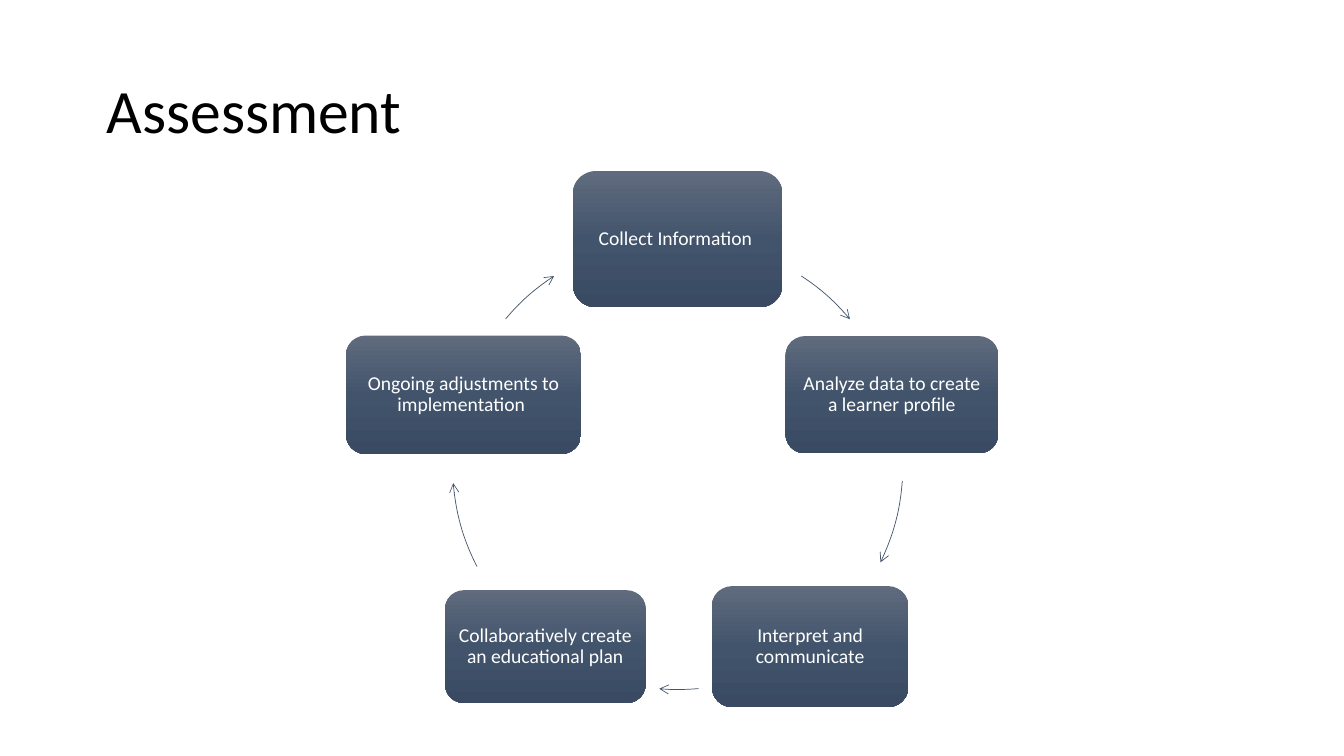
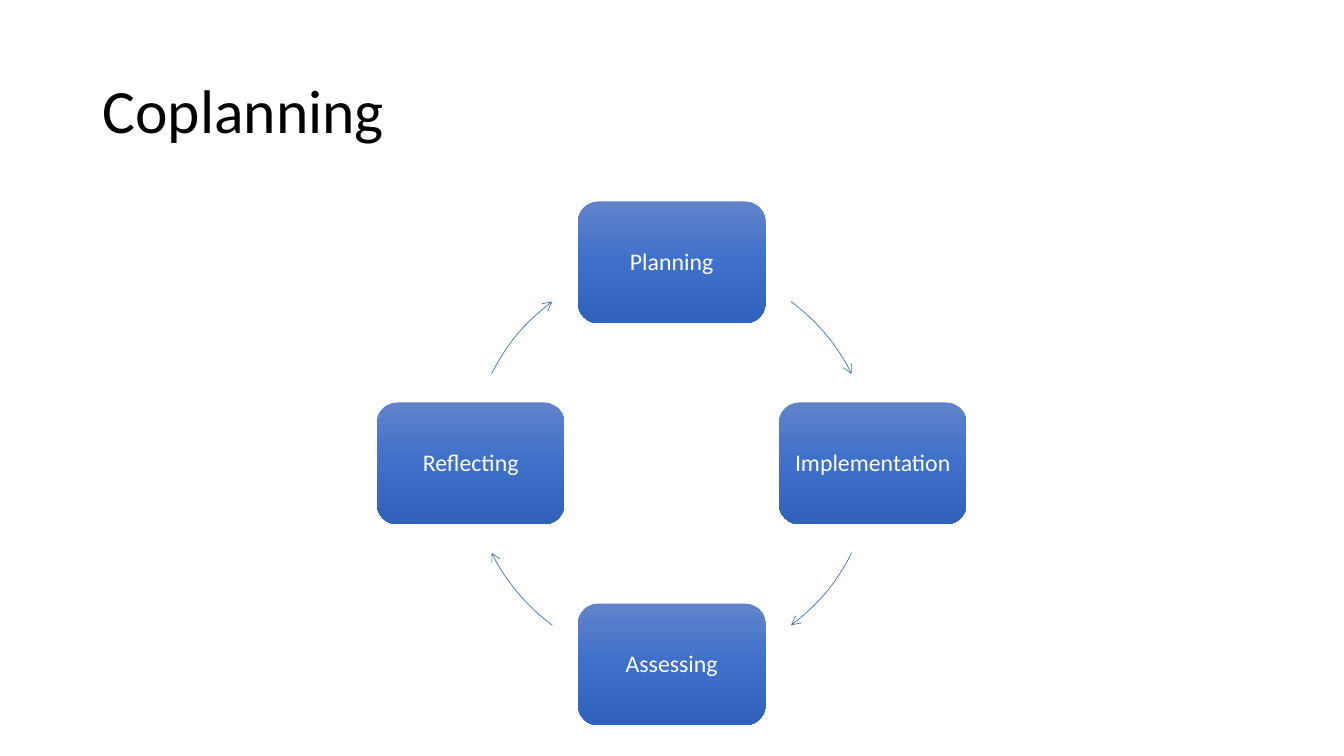
import math
from collections import namedtuple
from copy import deepcopy
from dataclasses import dataclass

from lxml import etree
from pptx import Presentation
from pptx.dml.color import RGBColor
from pptx.enum import shapes, text
from pptx.oxml import ns
from pptx.util import Pt

Box = namedtuple("Box", "left top width height")
Node = namedtuple("Node", "label width height")
Palette = namedtuple("Palette", "gradient line")


@dataclass(frozen=True)
class Theme:
    font: str = "Calibri"
    title_size: float = 44
    title_color: str = "000000"
    node_color: str = "FFFFFF"
    five_node_size: float = 14
    four_node_size: float = 17
    line_width: float = 0.5
    line_spacing: float = 0.9
    slate: Palette = Palette(("606B7D", "42546C", "394A62"), "44546A")
    blue: Palette = Palette(("6183CB", "3E70CA", "3062BB"), "4472C4")


THEME = Theme()
SLIDE_WIDTH, SLIDE_HEIGHT = 960, 540
TITLE_ONLY = 5


def place(sp, box):
    sp.left, sp.top, sp.width, sp.height = (Pt(v) for v in box)


def write(tf, words, size, color, align):
    tf.text = words
    tf.word_wrap = True
    tf.vertical_anchor = text.MSO_ANCHOR.MIDDLE
    p = tf.paragraphs[0]
    p.alignment = align
    p.line_spacing = THEME.line_spacing
    font = p.runs[0].font
    font.name = THEME.font
    font.size = Pt(size)
    font.color.rgb = RGBColor.from_string(color)


def fill_gradient(sp, colors):
    sp.fill.gradient()
    sp.fill.gradient_angle = 270
    stops = sp._element.spPr.find(".//" + ns.qn("a:gsLst"))
    stops.append(deepcopy(stops[-1]))
    for i, (stop, color) in enumerate(zip(sp.fill.gradient_stops, colors)):
        stop.position = i / (len(colors) - 1)
        stop.color.rgb = RGBColor.from_string(color)


def add_node(s, node, cx, cy, palette, size, inset):
    box = Box(cx - node.width / 2, cy - node.height / 2, node.width, node.height)
    sp = s.shapes.add_shape(shapes.MSO_SHAPE.ROUNDED_RECTANGLE, *(Pt(v) for v in box))
    sp.shadow.inherit = False
    fill_gradient(sp, palette.gradient)
    sp.line.fill.background()
    tf = sp.text_frame
    tf.margin_left = tf.margin_right = tf.margin_top = tf.margin_bottom = Pt(inset)
    write(tf, node.label, size, THEME.node_color, text.PP_ALIGN.CENTER)


def add_arc(s, box, start, end, color):
    sp = s.shapes.add_shape(shapes.MSO_SHAPE.ARC, *(Pt(v) for v in box))
    sp.shadow.inherit = False
    sp.fill.background()
    sp.line.color.rgb = RGBColor.from_string(color)
    sp.line.width = Pt(THEME.line_width)
    for i, angle in enumerate((start, end)):
        sp.adjustments[i] = angle % 360 * 0.6
    ln = sp._element.spPr.find(ns.qn("a:ln"))
    etree.SubElement(ln, ns.qn("a:tailEnd"), type="arrow")


def add_cycle(s, box, nodes, arcs, palette, size, inset):
    radius = box.width / 2
    cx, cy = box.left + radius, box.top + radius
    for i, (node, (start, end)) in enumerate(zip(nodes, arcs)):
        angle = math.radians(360 * i / len(nodes) - 90)
        x, y = cx + radius * math.cos(angle), cy + radius * math.sin(angle)
        add_node(s, node, x, y, palette, size, inset)
        add_arc(s, box, start, end, palette.line)


def add_titled_slide(prs, title, box):
    s = prs.slides.add_slide(prs.slide_layouts[TITLE_ONLY])
    sp = s.shapes.title
    place(sp, box)
    write(sp.text_frame, title, THEME.title_size, THEME.title_color, text.PP_ALIGN.LEFT)
    return s


def build_assessment(prs):
    s = add_titled_slide(prs, "Assessment", Box(69, 36, 605.5, 90))
    nodes = [
        Node("Collect Information ", 149.6, 97.2),
        Node("Analyze data to create a learner profile", 152, 83.8),
        Node("Interpret and communicate", 140.4, 86.4),
        Node("Collaboratively create an educational plan", 143.3, 80.6),
        Node("Ongoing adjustments to implementation ", 168, 84.6),
    ]
    arcs = [(-56.7, -40.1), (4.2, 25.8), (84.7, 94.7), (153, 175.2), (220.2, 236.7)]
    ring = Box(323.2, 170.8, 321.8, 321.8)
    add_cycle(s, ring, nodes, arcs, THEME.slate, THEME.five_node_size, 4.3)


def build_coplanning(prs):
    s = add_titled_slide(prs, "Coplanning", Box(66, 28.8, 828, 104.4))
    labels = ("Planning", "Implementation", "Assessing", "Reflecting")
    nodes = [Node(label, 134, 87) for label in labels]
    near, far = 26.4, 53.6
    arcs = [
        (half_turn + start, half_turn + end)
        for half_turn in (0, 180)
        for start, end in ((-far, -near), (near, far))
    ]
    ring = Box(336.2, 187.4, 287.2, 287.2)
    add_cycle(s, ring, nodes, arcs, THEME.blue, THEME.four_node_size, 5)


def main():
    prs = Presentation()
    prs.slide_width, prs.slide_height = Pt(SLIDE_WIDTH), Pt(SLIDE_HEIGHT)
    build_assessment(prs)
    build_coplanning(prs)
    prs.save("out.pptx")


if __name__ == "__main__":
    main()
